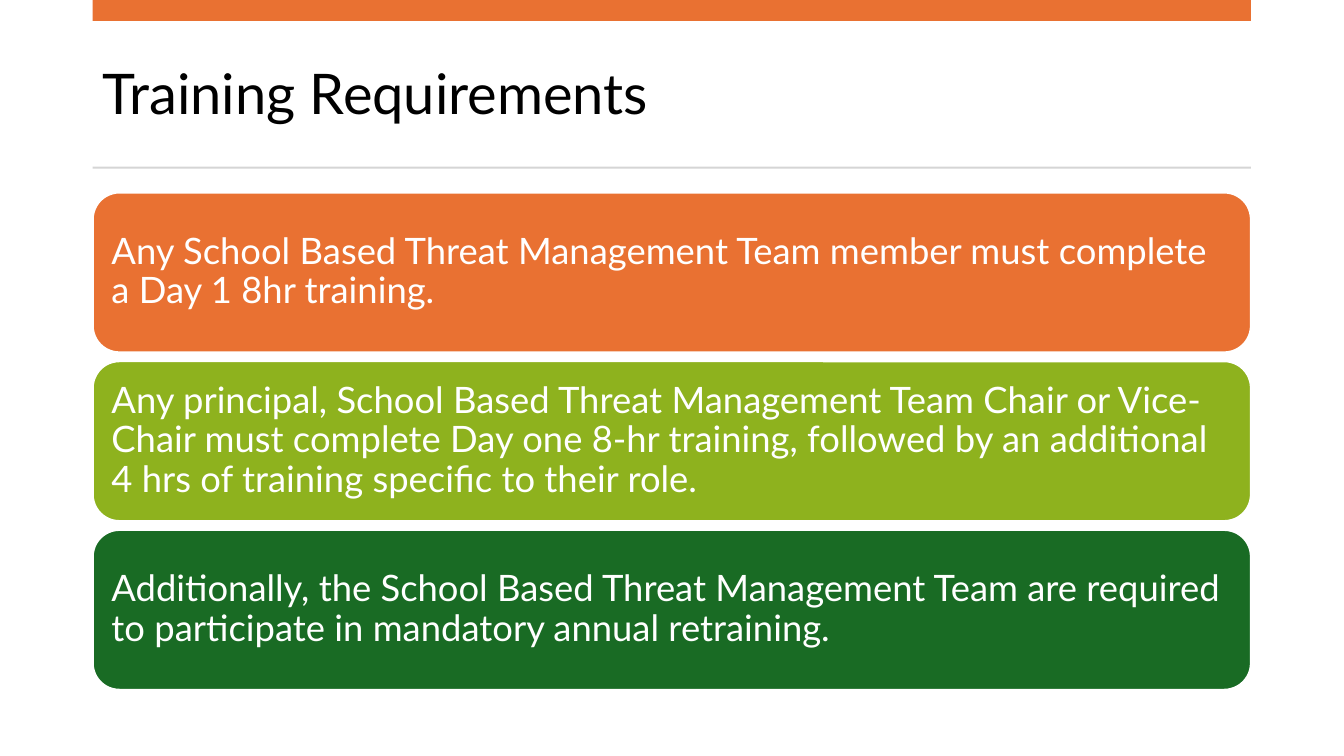
from dataclasses import dataclass

from pptx import Presentation
from pptx.dml.color import RGBColor
from pptx.enum.shapes import MSO_SHAPE
from pptx.enum.text import MSO_ANCHOR, PP_ALIGN
from pptx.shapes.autoshape import Shape
from pptx.slide import Slide
from pptx.util import Pt

RECTANGLE = MSO_SHAPE.RECTANGLE
ROUNDED = MSO_SHAPE.ROUNDED_RECTANGLE
MIDDLE = MSO_ANCHOR.MIDDLE
LEFT = PP_ALIGN.LEFT


@dataclass(frozen=True)
class Theme:
    font: str = "Lato"
    title_size: float = 40
    requirement_size: float = 26
    black: str = "000000"
    white: str = "FFFFFF"
    orange: str = "E97132"
    lime: str = "8EB21E"
    green: str = "196B24"
    grey: str = "D5D5D5"


@dataclass(frozen=True)
class Box:
    left: float
    top: float
    width: float
    height: float


@dataclass(frozen=True)
class Requirement:
    text: str
    fill: str


THEME = Theme()
MARGIN = 66.24
CONTENT_WIDTH = 827.3
CARD_TOP = 137.5
CARD_HEIGHT = 114.2
CARD_PITCH = 120.5
CARD_OUTLINE = 1.5

TITLE_BOX = Box(MARGIN, 26.6, CONTENT_WIDTH, 85)
BANNER = Box(MARGIN, 0, CONTENT_WIDTH, 15)
DIVIDER = Box(MARGIN, 119, CONTENT_WIDTH, 1.44)

REQUIREMENTS = [
    Requirement(
        "Any School Based Threat Management Team member must complete "
        "a Day 1 8hr training.",
        THEME.orange,
    ),
    Requirement(
        "Any principal, School Based Threat Management Team Chair or Vice-Chair "
        "must complete Day one 8-hr training, followed by an additional "
        "4 hrs of training specific to their role.",
        THEME.lime,
    ),
    Requirement(
        "Additionally, the School Based Threat Management Team are required "
        "to participate in mandatory annual retraining.",
        THEME.green,
    ),
]


def write_text(
    holder: Shape, text: str, *, size: float, color: str, inset_x: float, inset_y: float
) -> None:
    frame = holder.text_frame
    frame.word_wrap = True
    frame.vertical_anchor = MIDDLE
    frame.margin_left = frame.margin_right = Pt(inset_x)
    frame.margin_top = frame.margin_bottom = Pt(inset_y)
    paragraph = frame.paragraphs[0]
    paragraph.alignment = LEFT
    paragraph.line_spacing = 0.9
    run = paragraph.add_run()
    run.text = text
    run.font.name = THEME.font
    run.font.size = Pt(size)
    run.font.color.rgb = RGBColor.from_string(color)


def add_panel(slide: Slide, kind: MSO_SHAPE, box: Box, fill: str) -> Shape:
    panel = slide.shapes.add_shape(
        kind, Pt(box.left), Pt(box.top), Pt(box.width), Pt(box.height)
    )
    panel.shadow.inherit = False
    panel.fill.solid()
    panel.fill.fore_color.rgb = RGBColor.from_string(fill)
    panel.line.fill.background()
    return panel


def add_title(slide: Slide, text: str, box: Box) -> None:
    title = slide.shapes.add_textbox(
        Pt(box.left), Pt(box.top), Pt(box.width), Pt(box.height)
    )
    write_text(
        title, text, size=THEME.title_size, color=THEME.black, inset_x=7.2, inset_y=3.6
    )


def add_requirement(slide: Slide, requirement: Requirement, box: Box) -> None:
    card = add_panel(slide, ROUNDED, box, requirement.fill)
    card.line.color.rgb = RGBColor.from_string(THEME.white)
    card.line.width = Pt(CARD_OUTLINE)
    write_text(
        card,
        requirement.text,
        size=THEME.requirement_size,
        color=THEME.white,
        inset_x=7.8,
        inset_y=7.8,
    )


def main() -> None:
    presentation = Presentation()
    presentation.slide_width = Pt(960)
    presentation.slide_height = Pt(540)
    slide = presentation.slides.add_slide(presentation.slide_layouts[6])

    add_title(slide, "Training Requirements", TITLE_BOX)
    add_panel(slide, RECTANGLE, BANNER, THEME.orange)
    add_panel(slide, RECTANGLE, DIVIDER, THEME.grey)
    for row, requirement in enumerate(REQUIREMENTS):
        top = CARD_TOP + row * CARD_PITCH
        add_requirement(
            slide, requirement, Box(MARGIN, top, CONTENT_WIDTH, CARD_HEIGHT)
        )

    presentation.save("out.pptx")


if __name__ == "__main__":
    main()
